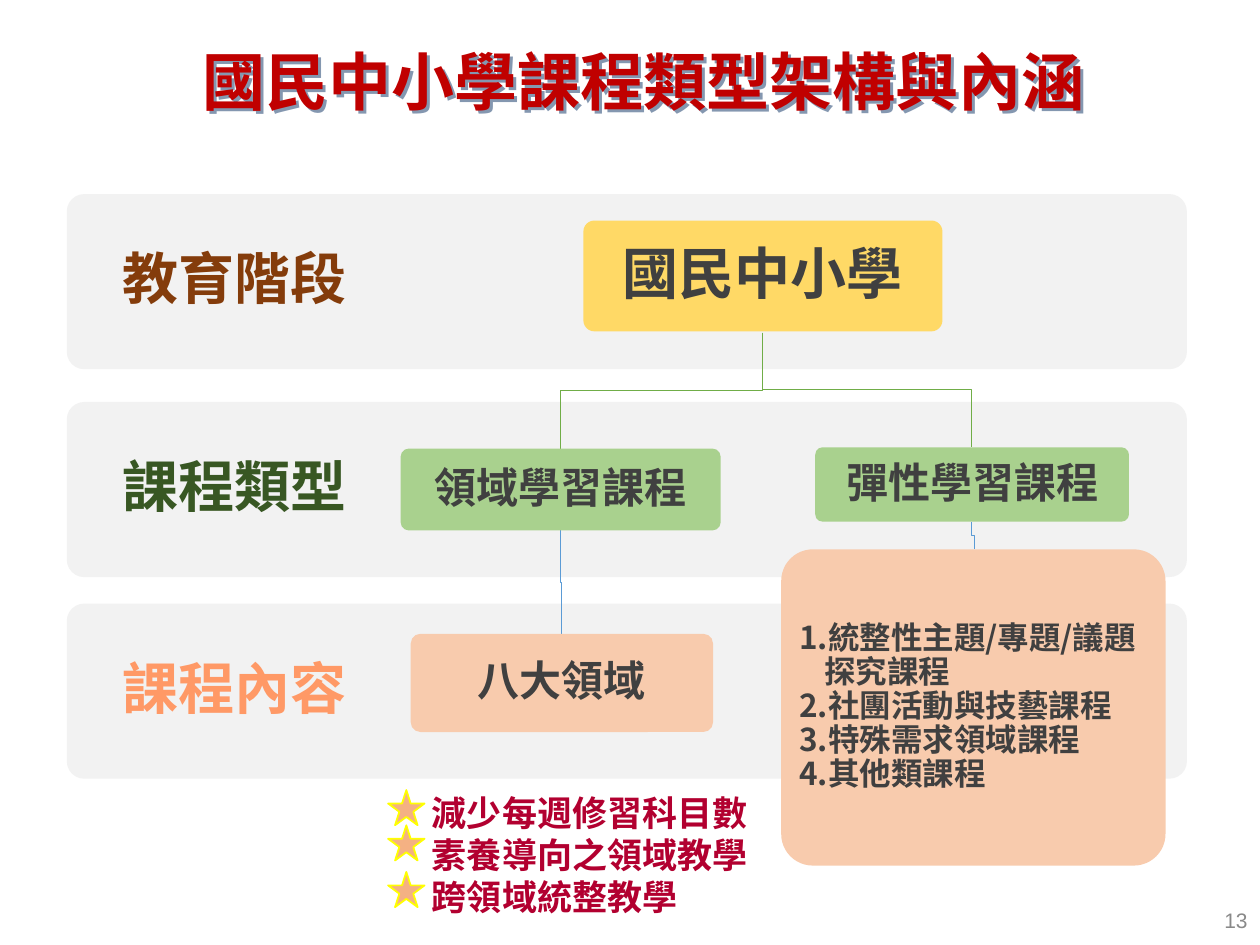
from typing import NamedTuple

from lxml import etree
from pptx import Presentation
from pptx import util as u
from pptx.dml.color import RGBColor
from pptx.enum import shapes, text
from pptx.oxml.ns import qn

PX = 9144  # EMU per px, 100 px to the inch
CJK_FONT = "Noto Sans CJK SC"
DARK, GREEN, PEACH = "404040", "A9D18E", "F8CBAD"
LEFT, CENTER, RIGHT = text.PP_ALIGN.LEFT, text.PP_ALIGN.CENTER, text.PP_ALIGN.RIGHT
TOP, MIDDLE = text.MSO_ANCHOR.TOP, text.MSO_ANCHOR.MIDDLE
ROUNDED = shapes.MSO_SHAPE.ROUNDED_RECTANGLE


class Box(NamedTuple):
    left: int
    top: int
    width: int
    height: int


class Style(NamedTuple):
    size: int
    color: str = DARK
    align: text.PP_ALIGN = CENTER
    anchor: text.MSO_ANCHOR = MIDDLE
    spacing: float = 0.9
    bold: bool = True
    font: str = CJK_FONT


class Band(NamedTuple):
    top: int
    label: str
    color: str


class Card(NamedTuple):
    box: Box
    lines: list[str]
    fill: str
    style: Style
    inset: int = 10


class Link(NamedTuple):
    start: tuple[int, int]
    end: tuple[int, int]
    color: str


BANDS = [
    Band(479, "課程內容", "FF9966"),
    Band(319, "課程類型", "385723"),
    Band(154, "教育階段", "843C0B"),
]
CARDS = [
    Card(Box(463, 175, 285, 88), ["國民中小學"], "FFD966", Style(32), 13),
    Card(Box(318, 356, 254, 65), ["領域學習課程"], GREEN, Style(24)),
    Card(Box(326, 503, 240, 78), ["八大領域"], PEACH, Style(24)),
    Card(Box(647, 355, 249, 59), ["彈性學習課程"], GREEN, Style(24)),
    Card(
        Box(620, 436, 305, 251),
        ["1.統整性主題/專題/議題探究課程", "2.社團活動與技藝課程",
         "3.特殊需求領域課程", "4.其他類課程"],
        PEACH, Style(18, align=LEFT), 7,
    ),
]
LINKS = [
    Link((605, 264), (445, 356), "70AD47"),
    Link((445, 421), (446, 503), "5B9BD5"),
    Link((605, 264), (771, 355), "70AD47"),
    Link((771, 414), (773, 436), "5B9BD5"),
]
GOALS = ["減少每週修習科目數", "素養導向之領域教學", "跨領域統整教學"]
STAR_TOPS = [627, 655, 692]


def rgb(color: str) -> RGBColor:
    return RGBColor.from_string(color)


def emu(values) -> list[int]:
    return [value * PX for value in values]


def write(shape, lines: list[str], style: Style, inset: int | None = None) -> None:
    frame = shape.text_frame
    frame.word_wrap = True
    frame.vertical_anchor = style.anchor
    if inset is not None:
        frame.margin_left = frame.margin_right = inset * PX
        frame.margin_top = frame.margin_bottom = inset * PX
    frame.text = "\n".join(lines)
    for paragraph in frame.paragraphs:
        paragraph.alignment = style.align
        paragraph.line_spacing = style.spacing
        font = paragraph.font
        font.size, font.bold, font.name = u.Pt(style.size), style.bold, style.font
        font.color.rgb = rgb(style.color)
        latin = font._element.find(qn("a:latin"))
        east_asian = etree.Element(qn("a:ea"), typeface=style.font)
        latin.addnext(east_asian)


def add_preset(slide, preset, box: Box, fill: str | None = None):
    shape = slide.shapes.add_shape(preset, *emu(box))
    shape.shadow.inherit = False
    shape.line.fill.background()
    if fill:
        shape.fill.solid()
        shape.fill.fore_color.rgb = rgb(fill)
    else:
        shape.fill.background()
    return shape


def add_text(slide, box: Box, lines: list[str], style: Style, inset: int | None = None) -> None:
    write(slide.shapes.add_textbox(*emu(box)), lines, style, inset)


def add_title(slide) -> None:
    shape = add_preset(slide, ROUNDED, Box(53, 24, 916, 100))
    write(shape, ["國民中小學課程類型架構與內涵"], Style(36, "C00000", anchor=TOP, spacing=1.0))
    effects = shape._element.spPr.find(qn("a:effectLst"))
    shadow = etree.SubElement(effects, qn("a:outerShdw"), dist="31000", dir="2700000", algn="tl")
    etree.SubElement(shadow, qn("a:srgbClr"), val="8497B0")


def add_band(slide, band: Band) -> None:
    box = Box(53, band.top, 889, 139)
    add_preset(slide, ROUNDED, box, "F2F2F2").adjustments[0] = 0.1
    add_text(slide, box._replace(width=267), [band.label], Style(32, band.color), 25)


def add_card(slide, card: Card) -> None:
    shape = add_preset(slide, ROUNDED, card.box, card.fill)
    shape.adjustments[0] = 0.1
    write(shape, card.lines, card.style, card.inset)
    if len(card.lines) > 1:
        properties = shape.text_frame.paragraphs[0]._p.get_or_add_pPr()
        properties.set("marL", str(20 * PX))
        properties.set("indent", str(-20 * PX))


def add_link(slide, link: Link) -> None:
    """Draw a stepped line that turns halfway down."""
    (start_x, start_y), (end_x, end_y) = link.start, link.end
    middle_y = (start_y + end_y) // 2
    builder = slide.shapes.build_freeform(start_x, start_y, scale=PX)
    builder.add_line_segments([(start_x, middle_y), (end_x, middle_y), link.end], close=False)
    shape = builder.convert_to_shape()
    shape.shadow.inherit = False
    shape.fill.background()
    shape.line.color.rgb = rgb(link.color)
    shape.line.width = u.Pt(0.5)


def add_star(slide, top: int) -> None:
    star = add_preset(slide, shapes.MSO_SHAPE.STAR_5_POINT, Box(308, top, 29, 28), "F4B183")
    star.line.color.rgb = rgb("FFFF00")
    star.line.width = u.Pt(1)


def main() -> None:
    presentation = Presentation()
    presentation.slide_width, presentation.slide_height = emu((1000, 750))
    slide = presentation.slides.add_slide(presentation.slide_layouts[6])
    add_title(slide)
    for band in BANDS:
        add_band(slide, band)
    for link in LINKS:
        add_link(slide, link)
    for card in CARDS:
        add_card(slide, card)
    add_text(slide, Box(333, 623, 366, 111), GOALS,
             Style(20, "B20030", LEFT, TOP, 1.0))
    add_text(slide, Box(775, 710, 225, 40), ["13"],
             Style(12, "898989", RIGHT, spacing=1.0, bold=False, font="Arial"))
    for top in STAR_TOPS:
        add_star(slide, top)
    presentation.save("out.pptx")


if __name__ == "__main__":
    main()
